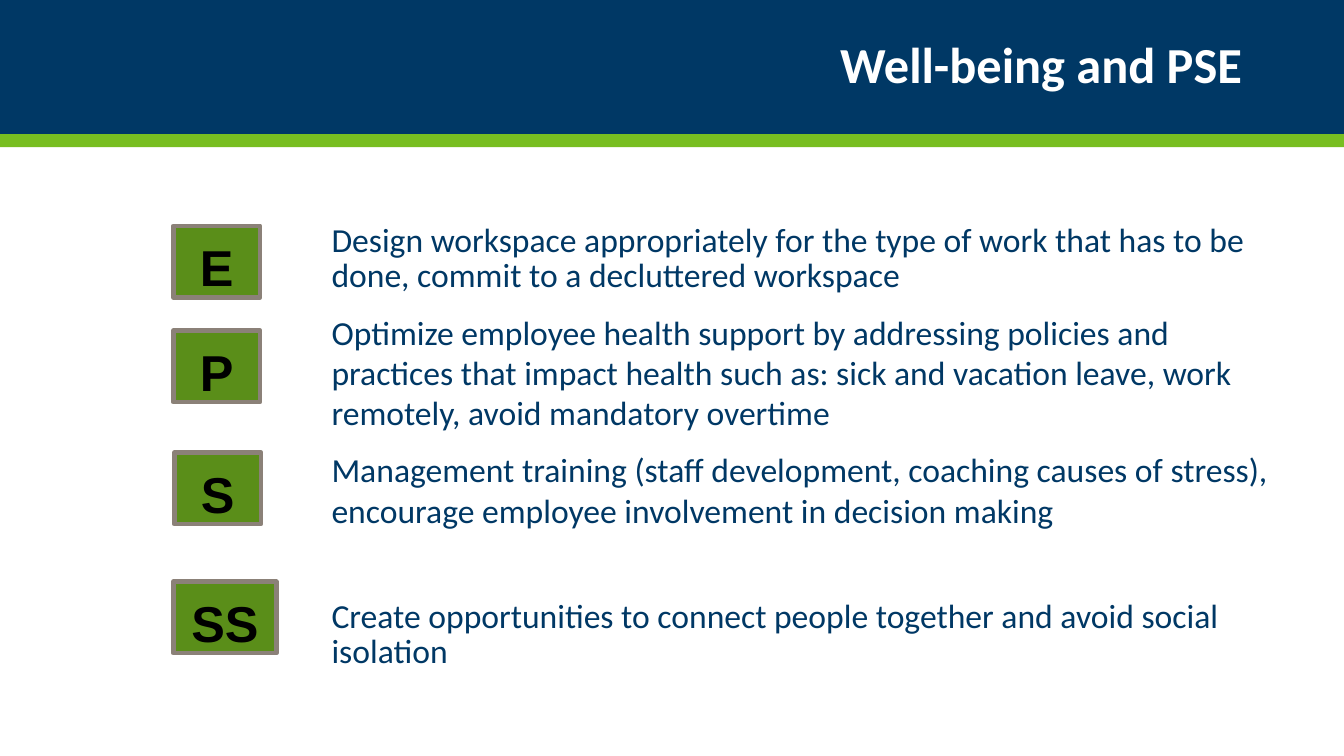
from pptx import Presentation
from pptx.dml.color import RGBColor
from pptx.enum.shapes import MSO_SHAPE
from pptx.enum.text import MSO_ANCHOR, PP_ALIGN
from pptx.util import Inches, Pt

COLORS = {
    "navy": "003865",
    "lime": "78BE21",
    "green": "5A8E19",
    "taupe": "8B8178",
    "white": "FFFFFF",
    "black": "000000",
}
TITLE = "Well-being and PSE"
BANDS = [(0, 1.33, "navy"), (1.33, 0.13, "lime")]
BADGES = [
    ("E", 1.72, 2.24, 0.86),
    ("P", 1.72, 3.28, 0.86),
    ("S", 1.73, 4.49, 0.86),
    ("SS", 1.72, 5.77, 1.02),
]
BADGE_HEIGHT = 0.71
ACTIONS = [
    ("Design workspace appropriately for the type of work that has to be done, "
     "commit to a decluttered workspace", {"line_spacing": Pt(25)}),
    ("Optimize employee health support by addressing policies and practices that "
     "impact health such as: sick and vacation leave, work remotely, avoid "
     "mandatory overtime", {"space_before": Pt(12)}),
    ("Management training (staff development, coaching causes of stress), "
     "encourage employee involvement in decision making", {"space_before": Pt(12)}),
    ("Create opportunities to connect people together and avoid social isolation",
     {"line_spacing": Pt(25), "space_before": Pt(50)}),
]
TITLE_FONT = {"name": "Calibri", "size": Pt(36), "bold": True}
ACTION_FONT = {"name": "Calibri", "size": Pt(24), "bold": False}
BADGE_FONT = {"name": "Arial", "size": Pt(36), "bold": True}


def set_all(target, values):
    for name, value in values.items():
        setattr(target, name, value)


def color(name):
    return RGBColor.from_string(COLORS[name])


def write(paragraph, text, font, color_name, layout):
    run = paragraph.add_run()
    run.text = text
    set_all(run.font, font)
    run.font.color.rgb = color(color_name)
    set_all(paragraph, layout)


def add_rectangle(slide, left, top, width, height, fill):
    shape = slide.shapes.add_shape(
        MSO_SHAPE.RECTANGLE, Inches(left), Inches(top), Inches(width), Inches(height))
    shape.shadow.inherit = False
    shape.fill.solid()
    shape.fill.fore_color.rgb = color(fill)
    shape.line.fill.background()
    return shape


def add_badge(slide, label, left, top, width):
    badge = add_rectangle(slide, left, top, width, BADGE_HEIGHT, "green")
    badge.line.color.rgb = color("taupe")
    badge.line.width = Pt(3.25)
    set_all(badge.text_frame, {
        "word_wrap": False, "vertical_anchor": MSO_ANCHOR.TOP,
        "margin_top": Inches(0.1), "margin_bottom": 0})
    write(badge.text_frame.paragraphs[0], label, BADGE_FONT, "black",
          {"alignment": PP_ALIGN.CENTER})


def add_text_frame(slide, left, top, width, height, anchor):
    box = slide.shapes.add_textbox(
        Inches(left), Inches(top), Inches(width), Inches(height))
    set_all(box.text_frame, {"word_wrap": True, "vertical_anchor": anchor})
    return box.text_frame


def main():
    presentation = Presentation()
    set_all(presentation, {"slide_width": Inches(13.33), "slide_height": Inches(7.5)})
    slide = presentation.slides.add_slide(presentation.slide_layouts[6])

    for top, height, fill in BANDS:
        add_rectangle(slide, 0, top, 13.33, height, fill)

    title = add_text_frame(slide, 0.92, 0.17, 11.5, 1, MSO_ANCHOR.MIDDLE)
    write(title.paragraphs[0], TITLE, TITLE_FONT, "white",
          {"alignment": PP_ALIGN.RIGHT, "line_spacing": 0.9})

    actions = add_text_frame(slide, 3.19, 2.18, 9.63, 4.56, MSO_ANCHOR.TOP)
    for index, (text, layout) in enumerate(ACTIONS):
        paragraph = actions.add_paragraph() if index else actions.paragraphs[0]
        write(paragraph, text, ACTION_FONT, "navy", layout)

    for badge in BADGES:
        add_badge(slide, *badge)

    presentation.save("out.pptx")


if __name__ == "__main__":
    main()
